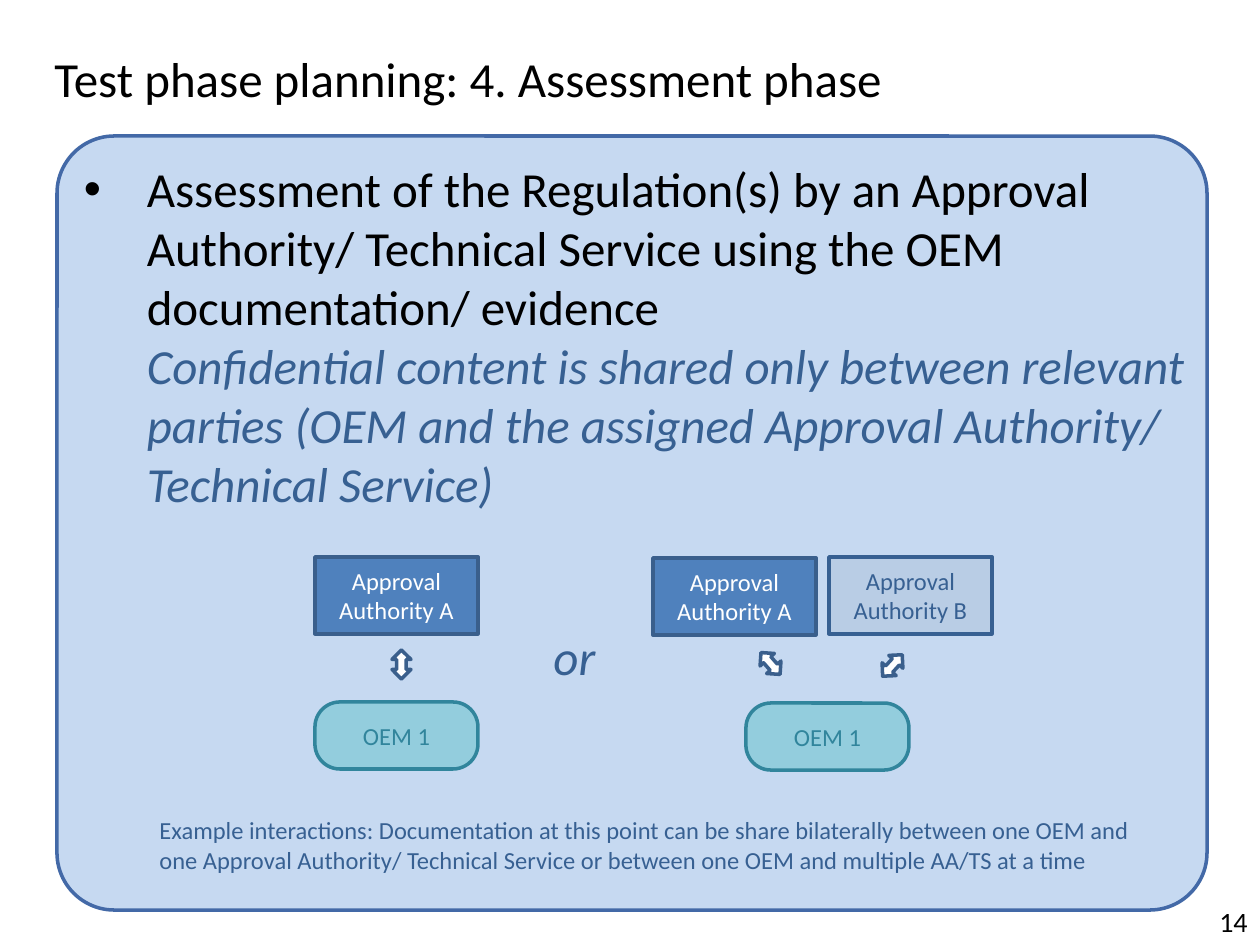
import pptx
import pptx.util
import pptx.dml.color
import pptx.enum.shapes
import pptx.enum.text
import pptx.oxml.ns
from lxml import etree

PX = 914400 / 126
SHAPE = pptx.enum.shapes.MSO_SHAPE
ALIGN = pptx.enum.text.PP_ALIGN
ANCHOR = pptx.enum.text.MSO_ANCHOR
NAVY = "376092"
EDGE = "3A5F8C"
TEAL = "31859C"


def px(*lengths):
    return [pptx.util.Emu(round(length * PX)) for length in lengths]


def rgb(code):
    return pptx.dml.color.RGBColor.from_string(code)


def add_run(paragraph, words, size, color, italic=False):
    run = paragraph.add_run()
    run.text = words
    run.font.name = "Calibri"
    run.font.size = pptx.util.Pt(size)
    run.font.color.rgb = rgb(color)
    if italic:
        run.font.italic = True


def add_label(slide, box, words, size, color="000000", italic=False,
              align=ALIGN.LEFT, wrap=True):
    frame = slide.shapes.add_textbox(*px(*box)).text_frame
    frame.word_wrap = wrap
    frame.paragraphs[0].alignment = align
    add_run(frame.paragraphs[0], words, size, color, italic)


def add_block(slide, kind, box, fill, line, corner=None):
    block = slide.shapes.add_shape(kind, *px(*box))
    block.shadow.inherit = False
    block.fill.solid()
    block.fill.fore_color.rgb = rgb(fill)
    block.line.color.rgb = rgb(line)
    block.line.width = pptx.util.Pt(2)
    if corner is not None:
        block.adjustments[0] = corner
    return block


def add_party(slide, kind, box, words, fill, line, color, corner=None):
    party = add_block(slide, kind, box, fill, line, corner)
    frame = party.text_frame
    frame.word_wrap = True
    frame.vertical_anchor = ANCHOR.MIDDLE
    frame.paragraphs[0].alignment = ALIGN.CENTER
    add_run(frame.paragraphs[0], words, 14, color)


def format_bullet(paragraph, indent):
    props = paragraph._p.get_or_add_pPr()
    props.set("marL", str(indent))
    props.set("indent", str(-indent))

    def add(parent, tag, **attributes):
        return etree.SubElement(parent, pptx.oxml.ns.qn(tag), **attributes)

    add(add(props, "a:spcBef"), "a:spcPct", val="20000")
    add(props, "a:buFont", typeface="Arial")
    add(props, "a:buChar", char="•")


def build_panel(slide, box):
    panel = add_block(slide, SHAPE.ROUNDED_RECTANGLE, box, "C6D9F1", "4369A7", 0.074)
    frame = panel.text_frame
    frame.word_wrap = True
    frame.vertical_anchor = ANCHOR.TOP
    frame.margin_left, frame.margin_right = px(10, 0)
    statement = frame.paragraphs[0]
    statement.alignment = ALIGN.LEFT
    format_bullet(statement, px(63)[0])
    add_run(statement, "Assessment of the Regulation(s) by an Approval Authority/ "
            "Technical Service using the OEM documentation/ evidence", 28, "000000")
    statement.add_line_break()
    add_run(statement, "Confidential content is shared only between relevant parties "
            "(OEM and the assigned Approval Authority/ Technical Service)",
            28, NAVY, italic=True)


def build_interaction(slide, left, top, authorities, arrows, oem_x):
    """Authorities over one OEM; offsets are relative to the left top corner."""
    for x, y, letter, fill, line, color in authorities:
        add_party(slide, SHAPE.RECTANGLE, (left + x, top + y, 163, 77),
                  f"Approval Authority {letter}", fill, line, color)
    add_party(slide, SHAPE.ROUNDED_RECTANGLE, (left + oem_x, top + 145, 163, 67),
              "OEM 1", "93CDDD", TEAL, TEAL, 0.372)
    for x, y, angle in arrows:
        arrow = add_block(slide, SHAPE.UP_DOWN_ARROW,
                          (left + x, top + y, 19, 29), "FFFFFF", EDGE)
        arrow.rotation = angle


def build_slide(slide):
    # Page number, panel and title
    add_label(slide, (1050, 898, 210, 47), "14", 16, align=ALIGN.RIGHT)
    build_panel(slide, (57, 136, 1150, 774))
    add_label(slide, (42, 42, 1155, 72), "Test phase planning: 4. Assessment phase", 28)

    # The two ways of sharing
    authority_a = (0, 0, "A", "4F81BD", EDGE, "FFFFFF")
    authority_b = (176, -1, "B", "B9CDE5", NAVY, NAVY)
    build_interaction(slide, 315, 557, [authority_a], [(77, 93, 0)], 0)
    add_label(slide, (541, 620, 68, 72), "or", 28, NAVY, italic=True, wrap=False)
    build_interaction(slide, 653, 558, [authority_a, authority_b],
                      [(108, 91, 318.8), (230, 93, 42.4)], 93)

    # Explanation
    add_label(slide, (147, 809, 1008, 72),
              "Example interactions: Documentation at this point can be share "
              "bilaterally between one OEM and one Approval Authority/ Technical "
              "Service or between one OEM and multiple AA/TS at a time", 14, NAVY)


def main():
    deck = pptx.Presentation()
    deck.slide_width, deck.slide_height = px(1260, 945)
    build_slide(deck.slides.add_slide(deck.slide_layouts[6]))
    deck.save("out.pptx")


if __name__ == "__main__":
    main()
